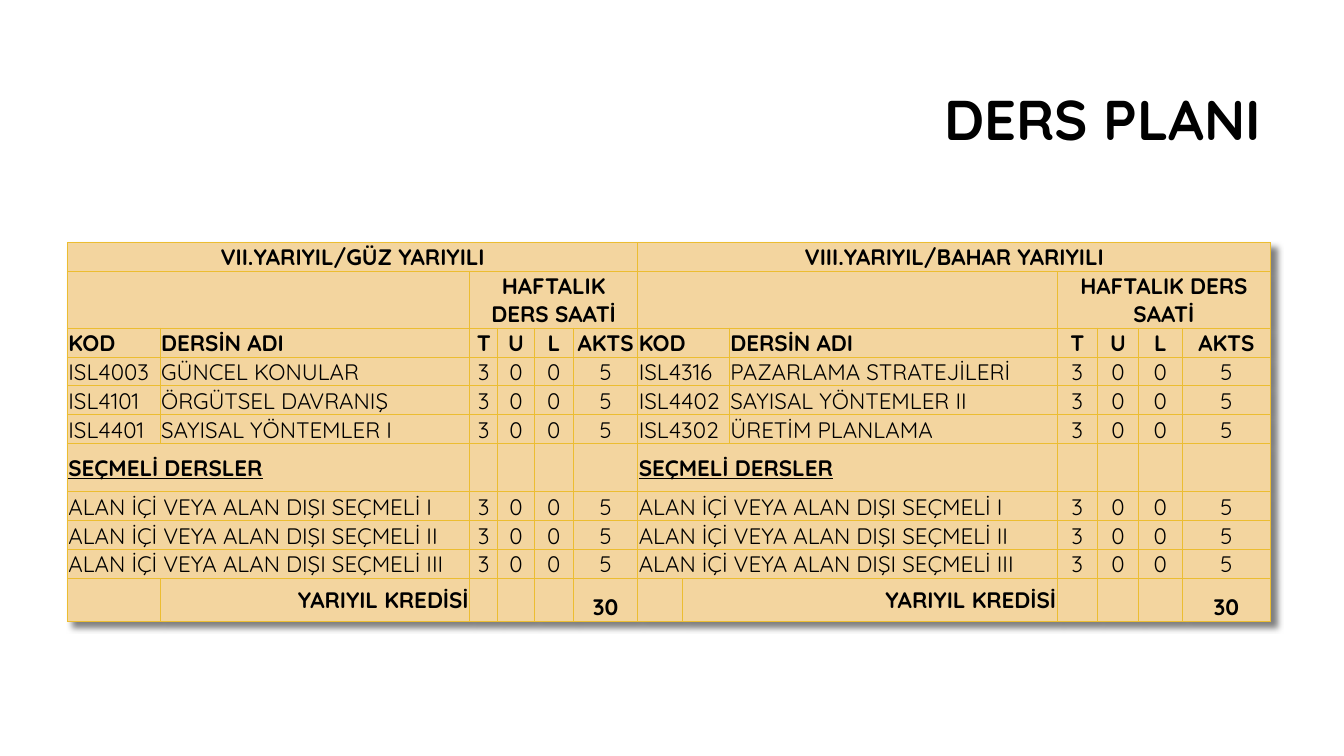
from lxml import etree
from pptx import Presentation
from pptx.dml.color import RGBColor
from pptx.enum import text
from pptx.oxml import ns
from pptx.util import Pt

TITLE = "DERS PLANI"
HOURS_TITLE = "HAFTALIK DERS SAATİ"
HOURS = ["T", "U", "L", "AKTS"]
COURSE_HOURS = ["3", "0", "0", "5"]
ELECTIVES_TITLE = "SEÇMELİ DERSLER"
ELECTIVES = [f"ALAN İÇİ VEYA ALAN DIŞI SEÇMELİ {number}" for number in ("I", "II", "III")]
CREDIT_LABEL, CREDIT = "YARIYIL KREDİSİ", "30"
SEMESTERS = [
    {"title": "VII.YARIYIL/GÜZ YARIYILI", "first": 0, "name": 1,
     "courses": [("ISL4003", "GÜNCEL KONULAR"),
                 ("ISL4101", "ÖRGÜTSEL DAVRANIŞ"),
                 ("ISL4401", "SAYISAL YÖNTEMLER I")]},
    {"title": "VIII.YARIYIL/BAHAR YARIYILI", "first": 6, "name": 8,
     "courses": [("ISL4316", "PAZARLAMA STRATEJİLERİ"),
                 ("ISL4402", "SAYISAL YÖNTEMLER II"),
                 ("ISL4302", "ÜRETİM PLANLAMA")]},
]
COLUMN_WIDTHS = [66.3, 221, 20.2, 25.9, 28.1, 46, 31.7, 33.8, 234, 28.8, 29.5, 31, 63.4]
LINE = 20.4
ROW_HEIGHTS = [LINE, 40, LINE, LINE, LINE, LINE, 34.4, LINE, LINE, LINE, 30.7]

FONT = "Quicksand"
BLACK = RGBColor(0x00, 0x00, 0x00)
SAND = RGBColor(0xF3, 0xD5, 0x9F)
GOLD = RGBColor(0xEC, 0xBD, 0x31)
LEFT, CENTER, RIGHT = text.PP_ALIGN.LEFT, text.PP_ALIGN.CENTER, text.PP_ALIGN.RIGHT
MIDDLE, BOTTOM = text.MSO_ANCHOR.MIDDLE, text.MSO_ANCHOR.BOTTOM


def write(frame, words, size=16, bold=False, underline=False, align=LEFT):
    paragraph = frame.paragraphs[0]
    paragraph.alignment = align
    run = paragraph.add_run()
    run.text = words
    font = run.font
    font.name, font.size, font.bold = FONT, Pt(size), bold
    font.underline = underline
    font.color.rgb = BLACK
    return paragraph


def style_cell(cell):
    cell.margin_left = cell.margin_top = cell.margin_right = Pt(0.7)
    cell.margin_bottom = 0
    cell.vertical_anchor = MIDDLE
    properties = cell._tc.get_or_add_tcPr()
    for side in ("lnL", "lnR", "lnT", "lnB"):
        border = etree.SubElement(properties, ns.qn(f"a:{side}"), w=str(Pt(0.75)))
        fill = etree.SubElement(border, ns.qn("a:solidFill"))
        etree.SubElement(fill, ns.qn("a:srgbClr"), val=str(GOLD))
    cell.fill.solid()
    cell.fill.fore_color.rgb = SAND


def add_shadow(table):
    effects = etree.SubElement(table._tbl.tblPr, ns.qn("a:effectLst"))
    table._tbl.tblPr.insert(0, effects)
    shadow = etree.SubElement(effects, ns.qn("a:outerShdw"), blurRad=str(Pt(4)),
                              dist=str(Pt(6)), dir="2700000", algn="tl", rotWithShape="0")
    color = etree.SubElement(shadow, ns.qn("a:srgbClr"), val=str(BLACK))
    etree.SubElement(color, ns.qn("a:alpha"), val="50000")


def put(table, row, first, last, words="", anchor=MIDDLE, **format):
    cell = table.cell(row, first)
    if last > first:
        cell.merge(table.cell(row, last))
    if words:
        write(cell.text_frame, words, **format)
        cell.vertical_anchor = anchor


def put_hours(table, row, first, values, bold=False):
    for offset, value in enumerate(values):
        put(table, row, first + offset, first + offset, value, bold=bold, align=CENTER)


def fill_semester(table, semester):
    first, name = semester["first"], semester["name"]
    hours = name + 1
    last = name + len(HOURS)
    put(table, 0, first, last, semester["title"], bold=True, align=CENTER)
    put(table, 1, first, name)
    put(table, 1, hours, last, HOURS_TITLE, bold=True, align=CENTER)
    courses = [("KOD", "DERSİN ADI")] + semester["courses"]
    for row, (code, course) in enumerate(courses, start=2):
        header = row == 2
        put(table, row, first, name - 1, code, bold=header)
        put(table, row, name, name, course, bold=header)
        put_hours(table, row, hours, HOURS if header else COURSE_HOURS, bold=header)
    put(table, 6, first, name, ELECTIVES_TITLE, bold=True, underline=True)
    for row, elective in enumerate(ELECTIVES, start=7):
        put(table, row, first, name, elective)
        put_hours(table, row, hours, COURSE_HOURS)
    put(table, 10, first + 1, name, CREDIT_LABEL, bold=True, align=RIGHT)
    put(table, 10, last, last, CREDIT, anchor=BOTTOM, bold=True, align=CENTER)


def main():
    presentation = Presentation()
    presentation.slide_width, presentation.slide_height = Pt(960), Pt(540)
    slide = presentation.slides.add_slide(presentation.slide_layouts[6])

    frame = slide.shapes.add_table(len(ROW_HEIGHTS), len(COLUMN_WIDTHS), Pt(48.2), Pt(173.2),
                                   Pt(sum(COLUMN_WIDTHS)), Pt(sum(ROW_HEIGHTS)))
    table = frame.table
    table.first_row = table.horz_banding = False
    add_shadow(table)
    for column, width in zip(table.columns, COLUMN_WIDTHS):
        column.width = Pt(width)
    for row, height in zip(table.rows, ROW_HEIGHTS):
        row.height = Pt(height)
    for cell in table.iter_cells():
        style_cell(cell)
    for semester in SEMESTERS:
        fill_semester(table, semester)

    title = slide.shapes.add_textbox(Pt(229.7), Pt(54.7), Pt(678.2), Pt(64.8)).text_frame
    title.word_wrap = True
    title.vertical_anchor = MIDDLE
    write(title, TITLE, size=40, bold=True, align=RIGHT).line_spacing = 0.9

    presentation.save("out.pptx")


if __name__ == "__main__":
    main()
